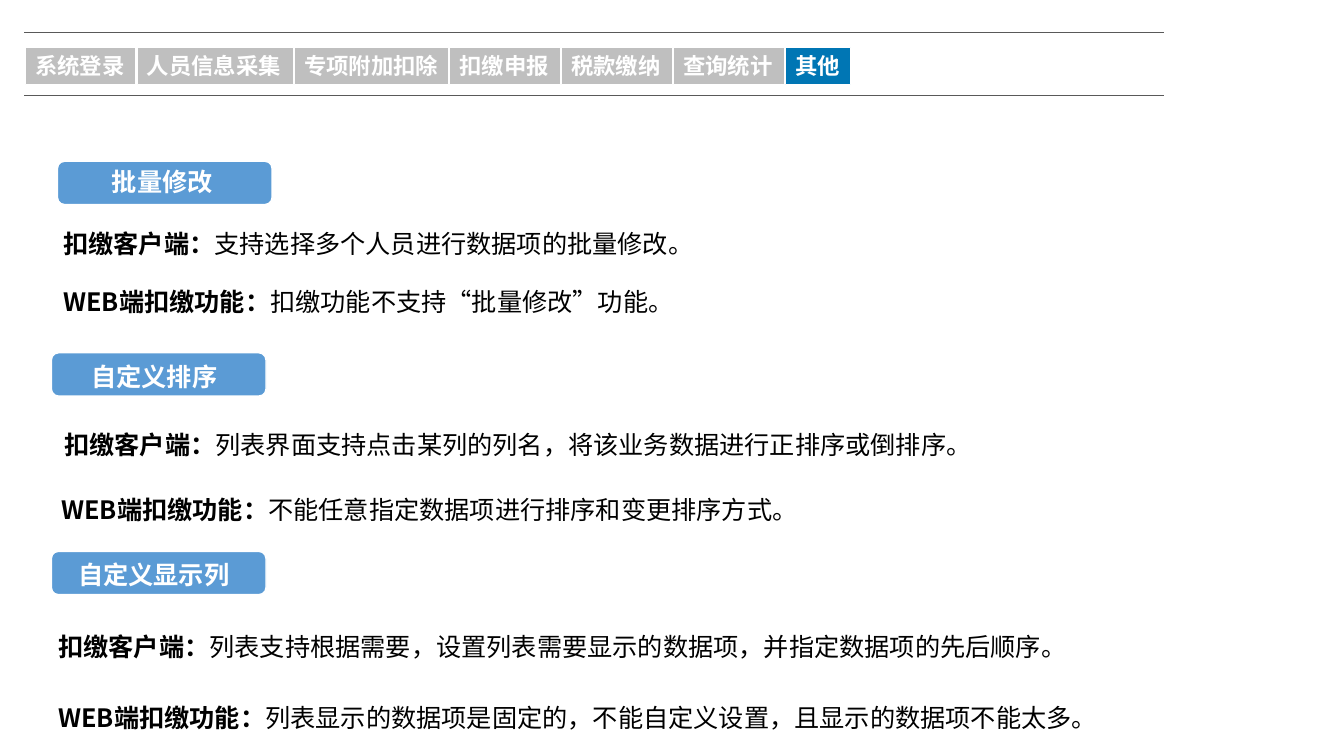
from lxml.etree import SubElement
from pptx import Presentation
from pptx.dml.color import RGBColor
from pptx.enum.lang import MSO_LANGUAGE_ID
from pptx.enum.shapes import MSO_CONNECTOR, MSO_SHAPE
from pptx.enum.text import MSO_ANCHOR, MSO_AUTO_SIZE, PP_ALIGN
from pptx.oxml.ns import qn
from pptx.util import Pt

WHITE = RGBColor(0xFF, 0xFF, 0xFF)
BLACK = RGBColor(0x00, 0x00, 0x00)
RULE_GRAY = RGBColor(0x59, 0x59, 0x59)
TAB_GRAY = RGBColor(0xBF, 0xBF, 0xBF)
TAB_ACTIVE = RGBColor(0x00, 0x76, 0xB4)
BADGE_BLUE = RGBColor(0x5B, 0x9B, 0xD5)
CHINESE_FONT = "Noto Sans CJK SC"
LATIN_FONT = "Calibri"

TAB_GAP = 0.72
TABS = [
    ("系统登录", 79.2),
    ("人员信息采集", 111.6),
    ("专项附加扣除", 110.16),
    ("扣缴申报", 79.2),
    ("税款缴纳", 79.2),
    ("查询统计", 79.2),
    ("其他", 46.8),
]
BADGES = [
    ("批量修改", (41.04, 115.2), (41.04, 115.2, 149.76)),
    ("自定义排序", (36.72, 252), (38.88, 254.88, 142.56)),
    ("自定义显示列", (36.72, 393.84), (38.16, 396, 143.28)),
]
CLIENT_LINES = [
    ((38.16, 159.84, 728.64, 28.8), 1, "支持选择多个人员进行数据项的批量修改。"),
    ((38.88, 303.12, 838.08, 51.12), 1,
     "列表界面支持点击某列的列名，将该业务数据进行正排序或倒排序。"),
    ((34.56, 436.32, 805.68, 39.6), 1.5,
     "列表支持根据需要，设置列表需要显示的数据项，并指定数据项的先后顺序。"),
]
WEB_LINES = [
    ((38.16, 200.88, 473.04, 28.8), 1, "扣缴功能不支持“批量修改”功能。"),
    ((36.72, 349.2, 840.96, 28.8), 1, "不能任意指定数据项进行排序和变更排序方式。"),
    ((34.56, 487.44, 843.12, 39.6), 1.5,
     "列表显示的数据项是固定的，不能自定义设置，且显示的数据项不能太多。"),
]


def add_span(para, text, size, color, bold=True, font=CHINESE_FONT):
    """Add one formatted run to a paragraph."""
    span = para.add_run()
    span.text = text
    span.font.size = Pt(size)
    span.font.bold = bold
    span.font.color.rgb = color
    span.font.name = font
    span.font.language_id = MSO_LANGUAGE_ID.SIMPLIFIED_CHINESE
    SubElement(span.font._element, qn("a:ea"), typeface=CHINESE_FONT)


def add_rule(page, top):
    """Draw a thin horizontal rule of the header."""
    rule = page.shapes.add_connector(
        MSO_CONNECTOR.STRAIGHT, Pt(17.28), Pt(top), Pt(831.6), Pt(top))
    rule.line.color.rgb = RULE_GRAY
    rule.line.width = Pt(0.5)
    SubElement(rule._element.spPr, qn("a:effectLst"))


def add_block(page, kind, bounds, fill, line_width):
    """Draw a filled shape with a white outline."""
    block = page.shapes.add_shape(kind, *map(Pt, bounds))
    block.shadow.inherit = False
    block.fill.solid()
    block.fill.fore_color.rgb = fill
    block.line.color.rgb = WHITE
    block.line.width = Pt(line_width)
    return block


def add_tab(page, left, width, text, fill):
    """Draw one navigation tab."""
    tab = add_block(page, MSO_SHAPE.RECTANGLE, (left, 33.84, width, 26.64), fill, 0.75)
    frame = tab.text_frame
    frame.word_wrap = False
    frame.auto_size = MSO_AUTO_SIZE.SHAPE_TO_FIT_TEXT
    frame.vertical_anchor = MSO_ANCHOR.TOP
    para = frame.paragraphs[0]
    para.alignment = PP_ALIGN.LEFT
    add_span(para, text, 16, WHITE)


def add_text_box(page, bounds):
    """Add a wrapping text box and return its paragraph."""
    box = page.shapes.add_textbox(*map(Pt, bounds))
    box.text_frame.word_wrap = True
    box.text_frame.auto_size = MSO_AUTO_SIZE.SHAPE_TO_FIT_TEXT
    return box.text_frame.paragraphs[0]


def add_badge(page, text, corner, label):
    """Draw a rounded section badge with its centred label."""
    add_block(page, MSO_SHAPE.ROUNDED_RECTANGLE, (*corner, 153.36, 30.96), BADGE_BLUE, 1)
    para = add_text_box(page, (*label, 28.8))
    para.alignment = PP_ALIGN.CENTER
    add_span(para, text, 18, WHITE)


def add_statement(page, bounds, spacing, lead, text, prefix=""):
    """Add a line with a bold lead and a plain explanation."""
    para = add_text_box(page, bounds)
    para.line_spacing = spacing
    if prefix:
        add_span(para, prefix, 18, BLACK)
    add_span(para, lead, 18, BLACK, font=LATIN_FONT)
    add_span(para, text, 18, BLACK, bold=False, font=LATIN_FONT)


def main():
    """Build the slide and save it."""
    deck = Presentation()
    deck.slide_width, deck.slide_height = Pt(960), Pt(540)
    page = deck.slides.add_slide(deck.slide_layouts[6])
    for top in (23.04, 68.4):
        add_rule(page, top)
    for text, corner, label in BADGES:
        add_badge(page, text, corner, label)
    for bounds, spacing, text in CLIENT_LINES:
        add_statement(page, bounds, spacing, "扣缴客户端：", text)
    for bounds, spacing, text in WEB_LINES:
        add_statement(page, bounds, spacing, "端扣缴功能：", text, prefix="WEB")
    left = 18
    for text, width in TABS:
        add_tab(page, left, width, text, TAB_ACTIVE if text == "其他" else TAB_GRAY)
        left += width + TAB_GAP
    deck.save("out.pptx")


if __name__ == "__main__":
    main()
